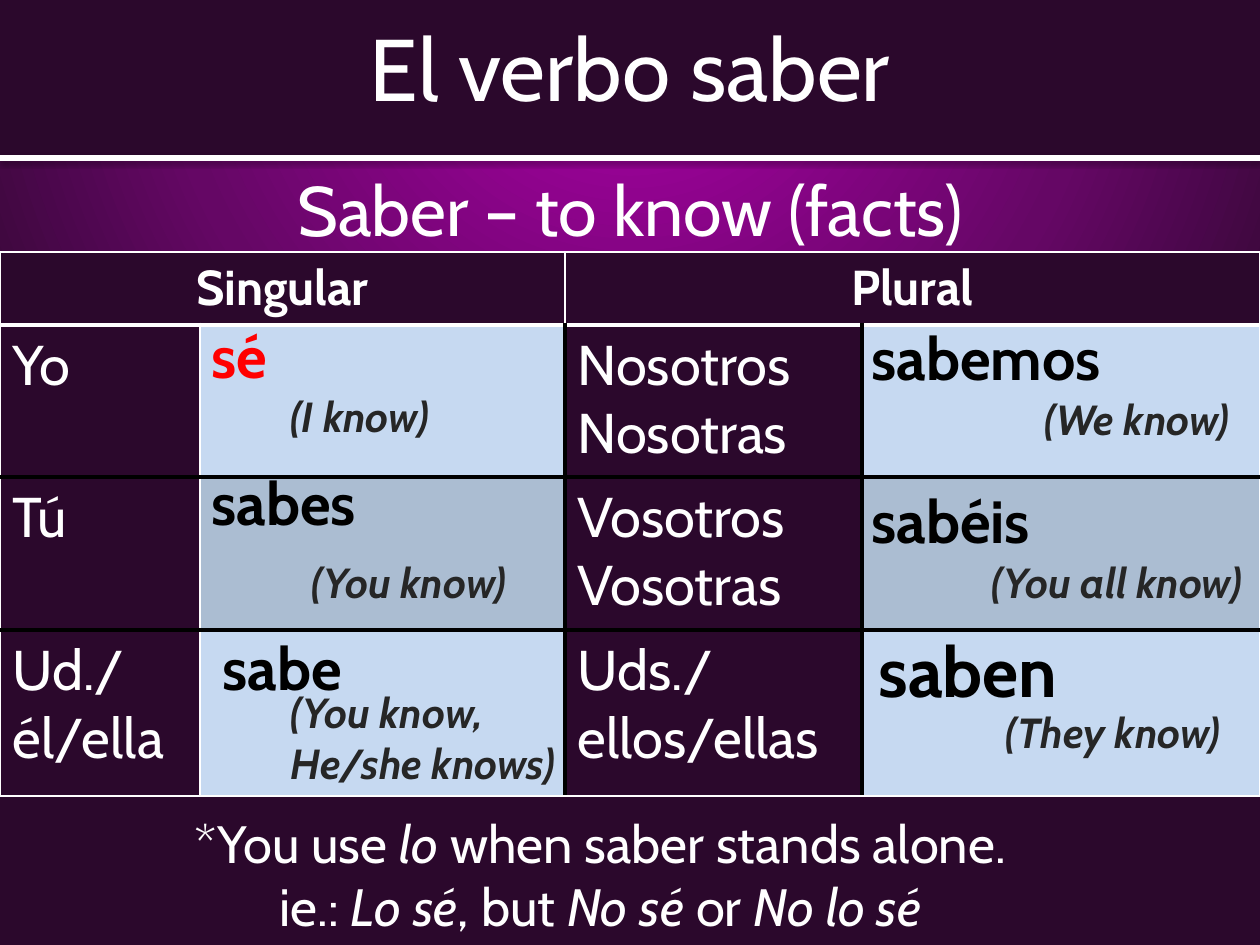
from pptx import Presentation
from pptx.dml.color import RGBColor
from pptx.enum.shapes import MSO_CONNECTOR, MSO_SHAPE
from pptx.enum.text import MSO_ANCHOR, MSO_AUTO_SIZE, PP_ALIGN
from pptx.oxml import parse_xml
from pptx.oxml.ns import nsdecls, qn
from pptx.util import Pt

COLORS = {
    "dark": "2B082C", "white": "FFFFFF", "black": "000000", "red": "FF0000",
    "gray": "262626", "blue": "C6D9F1", "blue_dim": "ABBDD2",
    "glow": "AE00AB", "purple": "650765",
}
FONT = "Cabin"
NO_STYLE = "{2D5ABB26-0587-4C30-8999-92F81FD0307C}"
COLS = [200, 365, 297, 398]
ROWS = [73, 152, 153, 166]
PRONOUNS = [
    ("Yo", "Nosotros\nNosotras"),
    ("Tú", "Vosotros\nVosotras"),
    ("Ud./él/ella", "Uds./ellos/ellas"),
]
FORMS = [
    ("sé", 199, 315, 354, 84, 34, "red"),
    ("sabes", 199, 462, 374, 84, 34, "black"),
    ("sabe", 210, 627, 344, 84, 34, "black"),
    ("sabemos", 859, 317, 417, 86, 34, "black"),
    ("sabéis", 859, 480, 318, 84, 34, "black"),
    ("saben", 866, 624, 387, 97, 40, "black"),
]
MEANINGS = [
    ("(I know)", 278, 386, 222, 63),
    ("(You know)", 299, 552, 222, 63),
    ("(You know, He/she knows)", 278, 682, 296, 113),
    ("(We know)", 1032, 389, 222, 63),
    ("(You all know)", 979, 552, 305, 63),
    ("(They know)", 993, 702, 297, 63),
]
NOTE = [
    [("*You use ", False), ("lo", True), (" when saber stands alone.", False)],
    [("ie.: ", False), ("Lo sé", True), (", but ", False), ("No sé ", True),
     ("or ", False), ("No lo sé", True)],
]


def px(n):
    """Turn pixels into EMU."""
    return round(n * 914400 / 126)


def rgb(name):
    """Return a named colour."""
    return RGBColor.from_string(COLORS[name])


def style(p, size, color="white", bold=None, italic=None, align=None):
    """Format one paragraph."""
    f = p.font
    f.name, f.size, f.bold, f.italic = FONT, Pt(size), bold, italic
    f.color.rgb = rgb(color)
    p.alignment = align


def set_background(s):
    """Give the slide a round purple glow."""
    stops = "".join(
        f'<a:gs pos="{pos}000"><a:srgbClr val="{COLORS[c]}"/></a:gs>'
        for pos, c in [(0, "glow"), (59, "purple"), (100, "dark")])
    s.element.cSld.insert(0, parse_xml(
        f'<p:bg {nsdecls("p", "a")}><p:bgPr><a:gradFill><a:gsLst>{stops}</a:gsLst>'
        '<a:path path="circle"><a:fillToRect l="50000" t="-80000" r="50000" b="180000"/>'
        '</a:path></a:gradFill><a:effectLst/></p:bgPr></p:bg>'))


def add_heading(s):
    """Place the title on its dark band, with a rule below."""
    band = s.shapes.add_shape(MSO_SHAPE.RECTANGLE, 0, 0, px(1260), px(158))
    band.shadow.inherit = False
    band.fill.solid()
    band.fill.fore_color.rgb = rgb("dark")
    band.line.fill.background()
    title = s.shapes.title
    title.element.addprevious(band.element)
    title.left, title.top, title.width, title.height = 0, 0, px(1260), px(134)
    tf = title.text_frame
    tf.text = "El verbo saber"
    tf.auto_size = MSO_AUTO_SIZE.NONE
    tf.vertical_anchor = MSO_ANCHOR.MIDDLE
    style(tf.paragraphs[0], 50, align=PP_ALIGN.CENTER)
    rule = s.shapes.add_connector(MSO_CONNECTOR.STRAIGHT, 0, px(158), px(1260), px(158))
    rule.line.color.rgb = rgb("white")
    rule.line.width = Pt(3)
    rule.element.spPr.append(parse_xml(
        f'<a:effectLst {nsdecls("a")}><a:outerShdw blurRad="40000" dist="20000" dir="5400000" '
        f'rotWithShape="0"><a:srgbClr val="{COLORS["black"]}"><a:alpha val="38000"/></a:srgbClr>'
        '</a:outerShdw></a:effectLst>'))


def add_text(s, x, y, w, h, lines, size):
    """Add centred white lines made of (text, italic) runs."""
    tf = s.shapes.add_textbox(px(x), px(y), px(w), px(h)).text_frame
    tf.word_wrap = True
    for i, line in enumerate(lines):
        p = tf.add_paragraph() if i else tf.paragraphs[0]
        style(p, size, align=PP_ALIGN.CENTER)
        for text, italic in line:
            r = p.add_run()
            r.text = text
            r.font.italic = italic or None


def add_plain_table(s, x, y, cols, rows):
    """Add a table without a built-in look."""
    shape = s.shapes.add_table(len(rows), len(cols), px(x), px(y), px(sum(cols)), px(sum(rows)))
    table = shape.table
    table.first_row = table.horz_banding = False
    table._tbl.tblPr.find(qn("a:tableStyleId")).text = NO_STYLE
    for col, w in zip(table.columns, cols):
        col.width = px(w)
    for row, h in zip(table.rows, rows):
        row.height = px(h)
    return table


def fill_cell(cell, text, fill, size, bold=None, align=None):
    """Set the text and fill of a cell."""
    cell.fill.solid()
    cell.fill.fore_color.rgb = rgb(fill)
    cell.text_frame.text = text
    for p in cell.text_frame.paragraphs:
        style(p, size, bold=bold, align=align)


def set_borders(cell, **sides):
    """Draw cell borders, each side given as (colour, points)."""
    tcPr = cell._tc.get_or_add_tcPr()
    for i, (side, (color, width)) in enumerate(sides.items()):
        tcPr.insert(i, parse_xml(
            f'<a:ln{side} {nsdecls("a")} w="{Pt(width)}"><a:solidFill>'
            f'<a:srgbClr val="{COLORS[color]}"/></a:solidFill></a:ln{side}>'))


def add_conjugation_grid(s):
    """Add the singular and plural grid."""
    table = add_plain_table(s, 0, 252, COLS, ROWS)
    thin, thick, black = ("white", 1), ("white", 3), ("black", 3)
    for c, text in [(0, "Singular"), (2, "Plural")]:
        table.cell(0, c).merge(table.cell(0, c + 1))
        fill_cell(table.cell(0, c), text, "dark", 28, True, PP_ALIGN.CENTER)
    for r, pronouns in enumerate(PRONOUNS, 1):
        for c, text in zip((0, 2), pronouns):
            fill_cell(table.cell(r, c), text, "dark", 32)
            fill_cell(table.cell(r, c + 1), "", "blue" if r % 2 else "blue_dim", 32)
    verticals = [thin, thin, black, black, thin]
    horizontals = [thin, thick, black, black, thin]
    for r in range(len(ROWS)):
        for c in range(len(COLS)):
            left, right = verticals[c:c + 2] if r else (thin, thin)
            set_borders(table.cell(r, c), L=left, R=right,
                        T=horizontals[r], B=horizontals[r + 1])


def add_label(s, text, x, y, w, h, size=24, color="gray", italic=True):
    """Add a bold label as a clear one-cell table."""
    cell = add_plain_table(s, x, y, [w], [h]).cell(0, 0)
    cell.fill.background()
    cell.text_frame.text = text
    style(cell.text_frame.paragraphs[0], size, color, True, italic)


def main():
    """Build and save the slide."""
    prs = Presentation()
    prs.slide_width, prs.slide_height = px(1260), px(945)
    s = prs.slides.add_slide(prs.slide_layouts[5])
    set_background(s)
    add_heading(s)
    add_text(s, 0, 160, 1260, 92, [[("Saber – to know (facts)", False)]], 40)
    add_conjugation_grid(s)
    for form in FORMS:
        add_label(s, *form, italic=None)
    for meaning in MEANINGS:
        add_label(s, *meaning)
    add_text(s, 74, 805, 1053, 140, NOTE, 30)
    prs.save("out.pptx")


if __name__ == "__main__":
    main()
